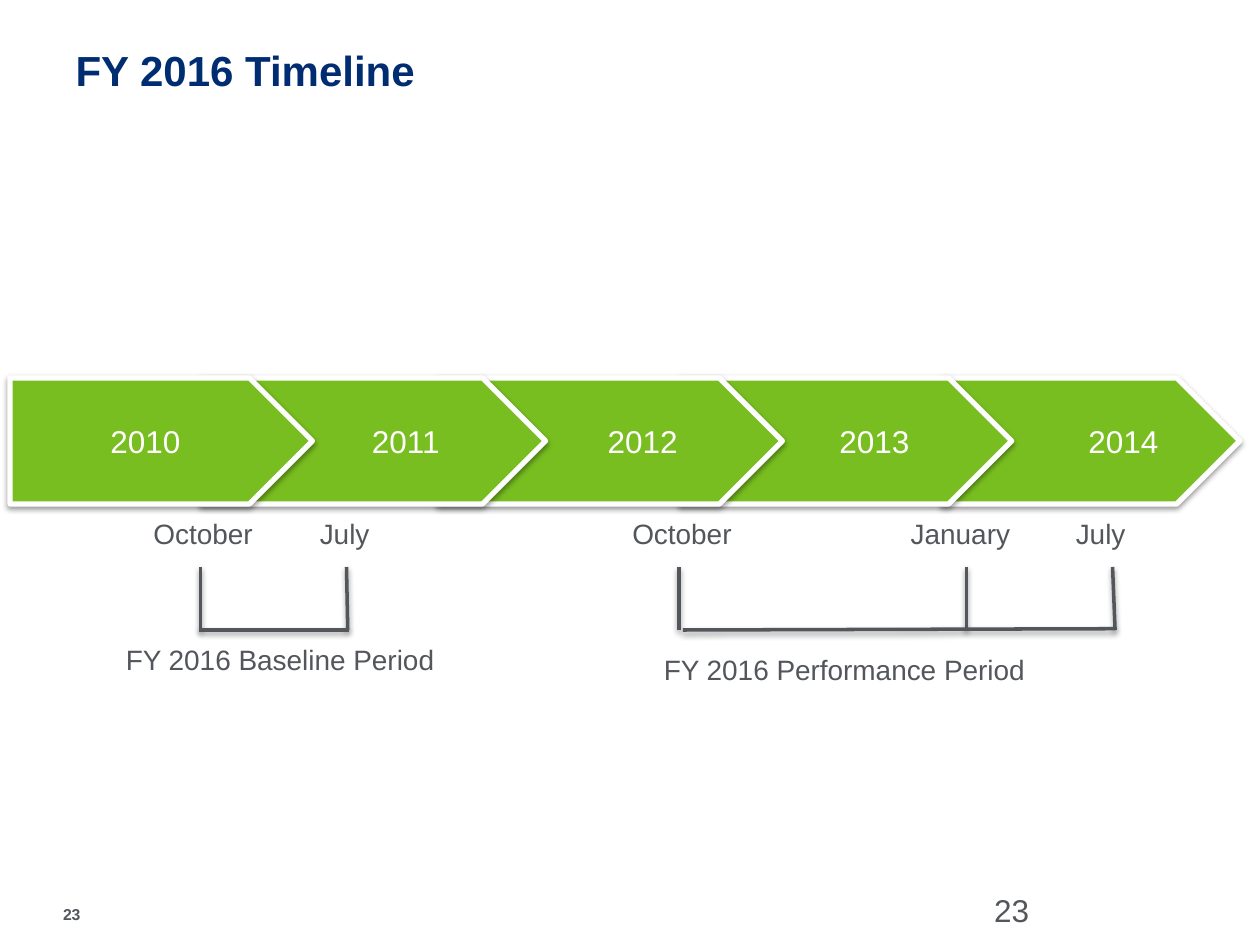
from collections import namedtuple

from lxml import etree
from pptx import Presentation, util as u
from pptx.dml import color
from pptx.enum import shapes, text
from pptx.oxml import ns

COLUMNS, ROWS = 10, 7.5
GREEN, WHITE, GREY, NAVY = "78BE20", "FFFFFF", "53565A", "002D72"
Box = namedtuple("Box", "left top width height")
Mark = namedtuple("Mark", "month label_left label_width tick_top tick_foot")


def rgb(value):
    """Turn a hex string into a colour."""
    return color.RGBColor.from_string(value)


def grid(*cells):
    """Turn columns or rows, each one inch, into lengths."""
    return [u.Inches(cell) for cell in cells]


def cast_shadow(part):
    """Give a shape or line a soft shadow below it."""
    properties = part._element.spPr
    effects = etree.SubElement(properties, ns.qn("a:effectLst"))
    shadow = etree.SubElement(effects, ns.qn("a:outerShdw"), blurRad="40000",
                              dist="20000", dir="5400000", rotWithShape="0")
    black = etree.SubElement(shadow, ns.qn("a:srgbClr"), val="000000")
    etree.SubElement(black, ns.qn("a:alpha"), val="38000")


def write(holder, words, size=16, ink=GREY, bold=False, align=text.PP_ALIGN.LEFT,
          anchor=text.MSO_ANCHOR.TOP, wrap=True, insets=(0.1, 0.05, 0.1, 0.05)):
    """Put formatted words into a shape's text frame."""
    frame = holder.text_frame
    frame.word_wrap = wrap
    frame.auto_size = text.MSO_AUTO_SIZE.NONE
    frame.vertical_anchor = anchor
    (frame.margin_left, frame.margin_top,
     frame.margin_right, frame.margin_bottom) = grid(*insets)
    paragraph = frame.paragraphs[0]
    paragraph.text = words
    paragraph.alignment = align
    font = paragraph.runs[0].font
    font.name, font.size, font.bold = "Arial", u.Pt(size), bold
    font.color.rgb = rgb(ink)


def add_label(slide, box, words, **style):
    """Add a text box with formatted words."""
    write(slide.shapes.add_textbox(*grid(*box)), words, **style)


def add_rule(slide, start, end):
    """Draw one grey bracket line."""
    rule = slide.shapes.add_connector(shapes.MSO_CONNECTOR.STRAIGHT,
                                      *grid(*start, *end))
    rule.line.color.rgb = rgb(GREY)
    rule.line.width = u.Pt(2)
    cast_shadow(rule)


def add_title(slide, box):
    """Place the heading in the title placeholder."""
    title = slide.shapes.title
    title.left, title.top, title.width, title.height = grid(*box)
    write(title, "FY 2016 Timeline", size=24, ink=NAVY, bold=True)


def add_years(slide, box, years):
    """Overlap the year arrows, with the earliest in front."""
    for year, left, width, indent in reversed(years):
        arrow = slide.shapes.add_shape(
            shapes.MSO_SHAPE.PENTAGON,
            *grid(box.left + left, box.top, width, box.height))
        arrow.fill.solid()
        arrow.fill.fore_color.rgb = rgb(GREEN)
        arrow.line.color.rgb = rgb(WHITE)
        arrow.line.width = u.Pt(3)
        cast_shadow(arrow)
        write(arrow, year, size=18, ink=WHITE, align=text.PP_ALIGN.CENTER,
              anchor=text.MSO_ANCHOR.MIDDLE, insets=(0.1 + indent, 0.05, 0.1, 0.05))


def add_period(slide, box, marks, base, caption):
    """Draw a bracket under its months, with a caption below it."""
    tick_top, tick_foot = box.top + 0.45, box.top + 0.95
    for mark in marks:
        add_label(slide, (box.left + mark.label_left, box.top, mark.label_width, 0.37),
                  mark.month, wrap=False)
        add_rule(slide, (box.left + mark.tick_top, tick_top),
                 (box.left + mark.tick_foot, tick_foot))
    start, end, rise = base
    add_rule(slide, (box.left + start, tick_foot), (box.left + end, tick_foot - rise))
    words, left, width = caption
    add_label(slide, (box.left + left, box.top + box.height - 0.37, width, 0.37),
              words, wrap=False)


def add_page_numbers(slide, box):
    """Place the small and the large page number along the foot."""
    add_label(slide, (box.left, box.top + 0.16, 0.32, 0.25), "23", size=9,
              bold=True, insets=(0, 0, 0, 0))
    add_label(slide, (box.left + 7.08, box.top, 2.33, box.height), "23", size=18,
              insets=(0.31, 0.05, 0.1, 0.05))


def main():
    """Build and save the timeline slide."""
    deck = Presentation()
    deck.slide_width, deck.slide_height = grid(COLUMNS, ROWS)
    slide = deck.slides.add_slide(deck.slide_layouts[5])
    add_title(slide, Box(0.5, 0.3, 9, 1.25))
    add_years(slide, Box(0.08, 3, 9.76, 1), [
        ("2010", 0, 2.4, 0),
        ("2011", 1.52, 2.73, 0.76),
        ("2012", 3.4, 2.73, 0.76),
        ("2013", 5.32, 2.63, 0.7),
        ("2014", 7.4, 2.36, 0.76),
    ])
    add_period(slide, Box(0.9, 4.05, 2.68, 1.37), [
        Mark("October", 0.22, 1, 0.69, 0.69),
        Mark("July", 1.54, 0.6, 1.85, 1.86),
    ], (0.68, 1.87, 0), ("FY 2016 Baseline Period", 0, 2.68))
    add_period(slide, Box(4.92, 4.05, 4.42, 1.45), [
        Mark("October", 0, 1, 0.47, 0.47),
        Mark("January", 2.21, 1, 2.75, 2.75),
        Mark("July", 3.52, 0.6, 3.91, 3.93),
    ], (0.5, 3.93, 0.01), ("FY 2016 Performance Period", 0.25, 4.17))
    add_page_numbers(slide, Box(0.5, 7.02, 9.41, 0.4))
    deck.save("out.pptx")


if __name__ == "__main__":
    main()
